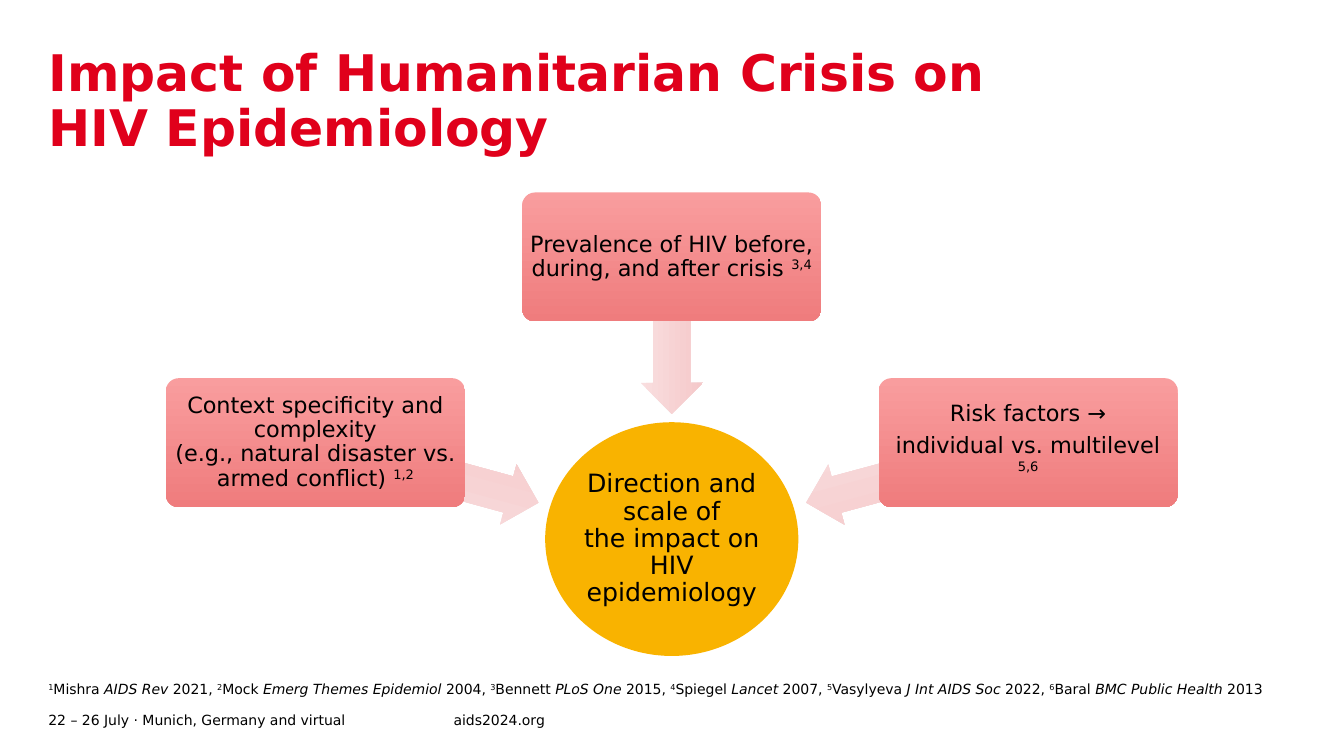
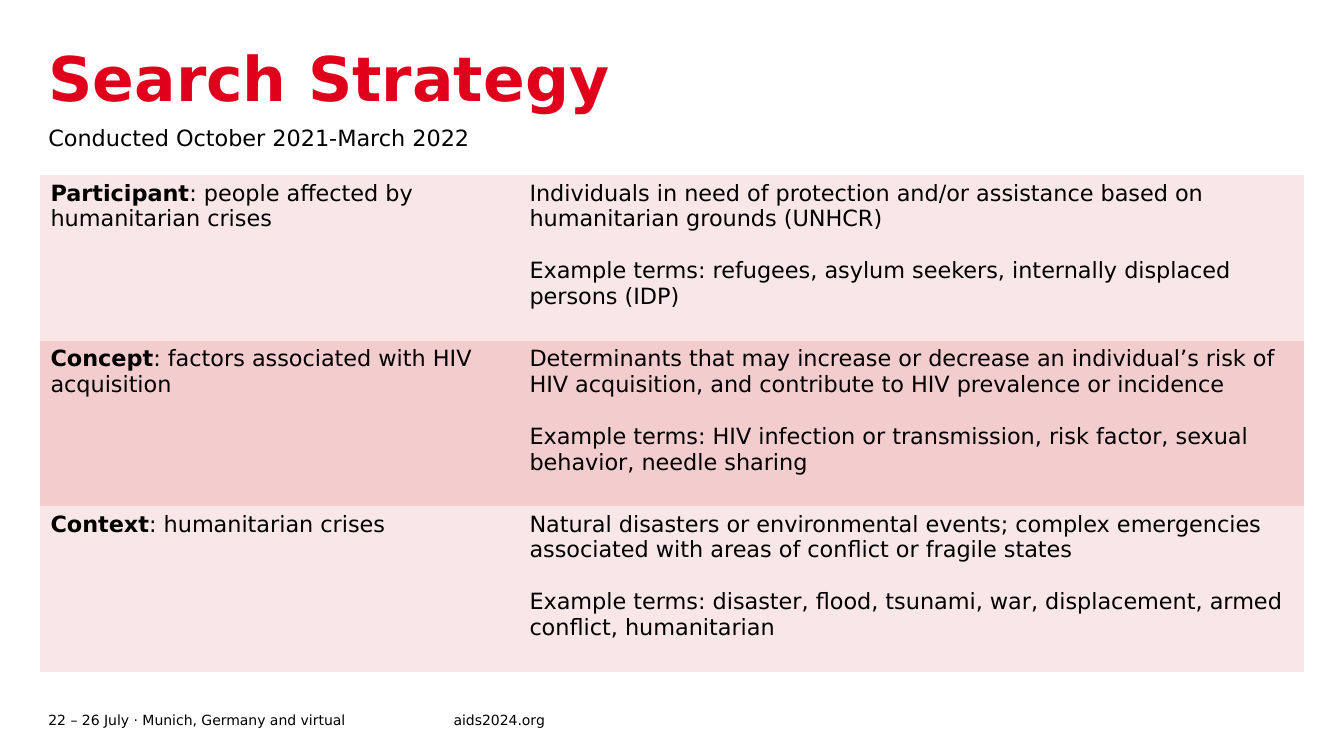
from pptx import Presentation
from pptx.dml.color import RGBColor
from pptx.enum.shapes import MSO_SHAPE
from pptx.enum.text import MSO_ANCHOR, MSO_AUTO_SIZE, PP_ALIGN
from pptx.util import Cm, Pt

ROUNDED = MSO_SHAPE.ROUNDED_RECTANGLE
ELLIPSE = MSO_SHAPE.OVAL
LEFT_ARROW = MSO_SHAPE.LEFT_ARROW
TOP, MIDDLE = MSO_ANCHOR.TOP, MSO_ANCHOR.MIDDLE
LEFT, CENTER = PP_ALIGN.LEFT, PP_ALIGN.CENTER
NO_AUTOFIT = MSO_AUTO_SIZE.NONE

FONT = "DejaVu Sans"
BLACK = RGBColor(0x00, 0x00, 0x00)
TITLE_RED = RGBColor(0xE0, 0x00, 0x1B)
AMBER = RGBColor(0xF9, 0xB3, 0x00)
BOX_GRADIENT = RGBColor(0xF9, 0x9D, 0x9E), RGBColor(0xEF, 0x7C, 0x7D)
ARROW_GRADIENT = RGBColor(0xF9, 0xDE, 0xDF), RGBColor(0xF5, 0xC9, 0xCA)
ROW_FILLS = RGBColor(0xF9, 0xE7, 0xE8), RGBColor(0xF3, 0xCC, 0xCD)

TITLE_ONLY = 5
PLAIN_TABLE_STYLE = "{2D5ABB26-0587-4C30-8999-92F81FD0307C}"
MARGIN = 1.22
CENTER_X = 16.93
BOX_WIDTH, BOX_HEIGHT = 7.54, 3.25
BOX_SPREAD = 8.98
ARROW_HEIGHT = 1.57

FOOTERS = [
    (MARGIN, 10.21, "22 – 26 July · Munich, Germany and virtual"),
    (11.43, 4.9, "aids2024.org"),
]

# Top, offset from the centre line in box spreads, and paragraphs
FACTORS = [
    (9.53, -1, [[("Context specificity and complexity\v"
                  "(e.g., natural disaster vs. armed conflict) ", ""),
                 ("1,2", "super")]]),
    (4.85, 0, [[("Prevalence of HIV before, during, and after crisis ", ""),
                ("3,4", "super")]]),
    (9.53, 1, [[("Risk factors →", "")],
               [("individual vs. multilevel ", ""), ("5,6", "super")]]),
]

# Centre x, centre y, length and rotation
ARROWS = [
    (10.81, 11.91, 5.72, 195.3),
    (CENTER_X, 8.46, 3.94, 270),
    (23.13, 11.91, 5.82, 344.9),
]

REFERENCES = [
    ("Mishra", "AIDS Rev", 2021),
    ("Mock", "Emerg Themes Epidemiol", 2004),
    ("Bennett", "PLoS One", 2015),
    ("Spiegel", "Lancet", 2007),
    ("Vasylyeva", "J Int AIDS Soc", 2022),
    ("Baral", "BMC Public Health", 2013),
]

STRATEGY = [
    ("Participant", "people affected by humanitarian crises",
     "Individuals in need of protection and/or assistance based on "
     "humanitarian grounds (UNHCR)",
     "refugees, asylum seekers, internally displaced persons (IDP)"),
    ("Concept", "factors associated with HIV acquisition",
     "Determinants that may increase or decrease an individual’s risk of "
     "HIV acquisition, and contribute to HIV prevalence or incidence",
     "HIV infection or transmission, risk factor, sexual behavior, "
     "needle sharing"),
    ("Context", "humanitarian crises",
     "Natural disasters or environmental events; complex emergencies "
     "associated with areas of conflict or fragile states",
     "disaster, flood, tsunami, war, displacement, armed conflict, "
     "humanitarian"),
]


def set_font(font, size, color=BLACK, bold=False, italic=False):
    font.name, font.size = FONT, Pt(size)
    font.color.rgb = color
    font.bold, font.italic = bold, italic


def write(frame, paragraphs, size, align=LEFT, line_spacing=None, gap=0):
    """Fill a frame; each paragraph is a list of (text, style) pairs."""
    for index, pieces in enumerate(paragraphs):
        paragraph = frame.paragraphs[0] if index == 0 else frame.add_paragraph()
        paragraph.alignment = align
        paragraph.line_spacing = line_spacing
        if index:
            paragraph.space_before = Pt(gap)
        for text, style in pieces:
            first, *broken_lines = text.split("\v")
            for number, line in enumerate([first] + broken_lines):
                if number:
                    paragraph.add_line_break()
                run = paragraph.add_run()
                run.text = line
                set_font(run.font, size, bold=style == "bold",
                         italic=style == "italic")
                if style == "super":
                    run._r.get_or_add_rPr().set("baseline", "30000")


def set_frame(frame, margin=0.0, anchor=TOP):
    frame.word_wrap = True
    frame.auto_size = NO_AUTOFIT
    frame.vertical_anchor = anchor
    frame.margin_left = frame.margin_right = Cm(margin)
    frame.margin_top = frame.margin_bottom = Cm(margin)


def add_text(slide, left, top, width, height, pieces, size, anchor=TOP):
    box = slide.shapes.add_textbox(Cm(left), Cm(top), Cm(width), Cm(height))
    set_frame(box.text_frame, anchor=anchor)
    write(box.text_frame, [pieces], size)


def add_titled_slide(prs, title_text, title_size):
    """Add a slide with the common title and footers."""
    slide = prs.slides.add_slide(prs.slide_layouts[TITLE_ONLY])
    title = slide.shapes.title
    title.left, title.top = Cm(MARGIN), Cm(MARGIN)
    title.width, title.height = Cm(24.69), Cm(3.4)
    set_frame(title.text_frame)
    title.text_frame.text = title_text
    paragraph = title.text_frame.paragraphs[0]
    paragraph.alignment, paragraph.line_spacing = LEFT, 0.9
    set_font(paragraph.runs[0].font, title_size, TITLE_RED, bold=True)
    for left, width, text in FOOTERS:
        add_text(slide, left, 17.83, width, 0.61, [(text, "")], 10, MIDDLE)
    return slide


def add_centered_shape(slide, kind, center_x, top, width, height):
    shape = slide.shapes.add_shape(
        kind, Cm(center_x - width / 2), Cm(top), Cm(width), Cm(height))
    shape.shadow.inherit = False
    shape.line.fill.background()
    return shape


def fill_gradient(shape, colors):
    """Blend two colours from top to bottom."""
    shape.fill.gradient()
    shape.fill.gradient_angle = 270
    for stop, color in zip(shape.fill.gradient_stops, colors):
        stop.color.rgb = color


def add_outcome(slide):
    outcome = add_centered_shape(slide, ELLIPSE, CENTER_X, 10.64, 6.38, 5.89)
    outcome.fill.solid()
    outcome.fill.fore_color.rgb = AMBER
    set_frame(outcome.text_frame, 0.03, MIDDLE)
    text = "Direction and scale of\vthe impact on HIV epidemiology"
    write(outcome.text_frame, [[(text, "")]], 18, CENTER, 0.9)


def add_arrow(slide, center_x, center_y, length, rotation):
    arrow = add_centered_shape(slide, LEFT_ARROW, center_x,
                               center_y - ARROW_HEIGHT / 2, length, ARROW_HEIGHT)
    arrow.adjustments[0], arrow.adjustments[1] = 0.6, 0.5
    arrow.rotation = rotation
    fill_gradient(arrow, ARROW_GRADIENT)


def add_factor(slide, top, column, paragraphs):
    factor = add_centered_shape(slide, ROUNDED, CENTER_X + column * BOX_SPREAD,
                                top, BOX_WIDTH, BOX_HEIGHT)
    factor.adjustments[0] = 0.1
    fill_gradient(factor, BOX_GRADIENT)
    set_frame(factor.text_frame, 0.08, MIDDLE)
    write(factor.text_frame, paragraphs, 16, CENTER, 0.9, gap=5.6)


def add_references(slide):
    pieces = []
    for number, (author, journal, year) in enumerate(REFERENCES, 1):
        ending = ", " if number < len(REFERENCES) else ""
        pieces += [(str(number), "super"), (f"{author} ", ""),
                   (journal, "italic"), (f" {year}{ending}", "")]
    add_text(slide, MARGIN, 17.15, 31.45, 0.46, pieces, 10)


def add_strategy_table(slide):
    column_widths, row_height = (12.07, 19.76), 4.17
    table = slide.shapes.add_table(
        len(STRATEGY), len(column_widths), Cm(1.02), Cm(4.42),
        Cm(sum(column_widths)), Cm(row_height * len(STRATEGY))).table
    table.first_row = table.horz_banding = False
    table._tbl.tblPr[0].text = PLAIN_TABLE_STYLE
    for column, width in zip(table.columns, column_widths):
        column.width = Cm(width)
    for index, (element, meaning, definition, terms) in enumerate(STRATEGY):
        table.rows[index].height = Cm(row_height)
        contents = (
            [[(element, "bold"), (f": {meaning}", "")]],
            [[(definition, "")], [(f"Example terms: {terms}", "")]],
        )
        for cell, paragraphs in zip(table.rows[index].cells, contents):
            cell.fill.solid()
            cell.fill.fore_color.rgb = ROW_FILLS[index % 2]
            write(cell.text_frame, paragraphs, 16, gap=18.6)


def build_impact_slide(prs):
    slide = add_titled_slide(
        prs, "Impact of Humanitarian Crisis on HIV Epidemiology", 36)
    add_outcome(slide)
    for arrow in ARROWS:
        add_arrow(slide, *arrow)
    for factor in FACTORS:
        add_factor(slide, *factor)
    add_references(slide)


def build_strategy_slide(prs):
    slide = add_titled_slide(prs, "Search Strategy", 44)
    add_strategy_table(slide)
    add_text(slide, MARGIN, 3.12, 25.37, 1.24,
             [("Conducted October 2021-March 2022", "")], 16)


def main():
    prs = Presentation()
    prs.slide_width, prs.slide_height = Cm(33.87), Cm(19.05)
    build_impact_slide(prs)
    build_strategy_slide(prs)
    prs.save("out.pptx")


if __name__ == "__main__":
    main()
